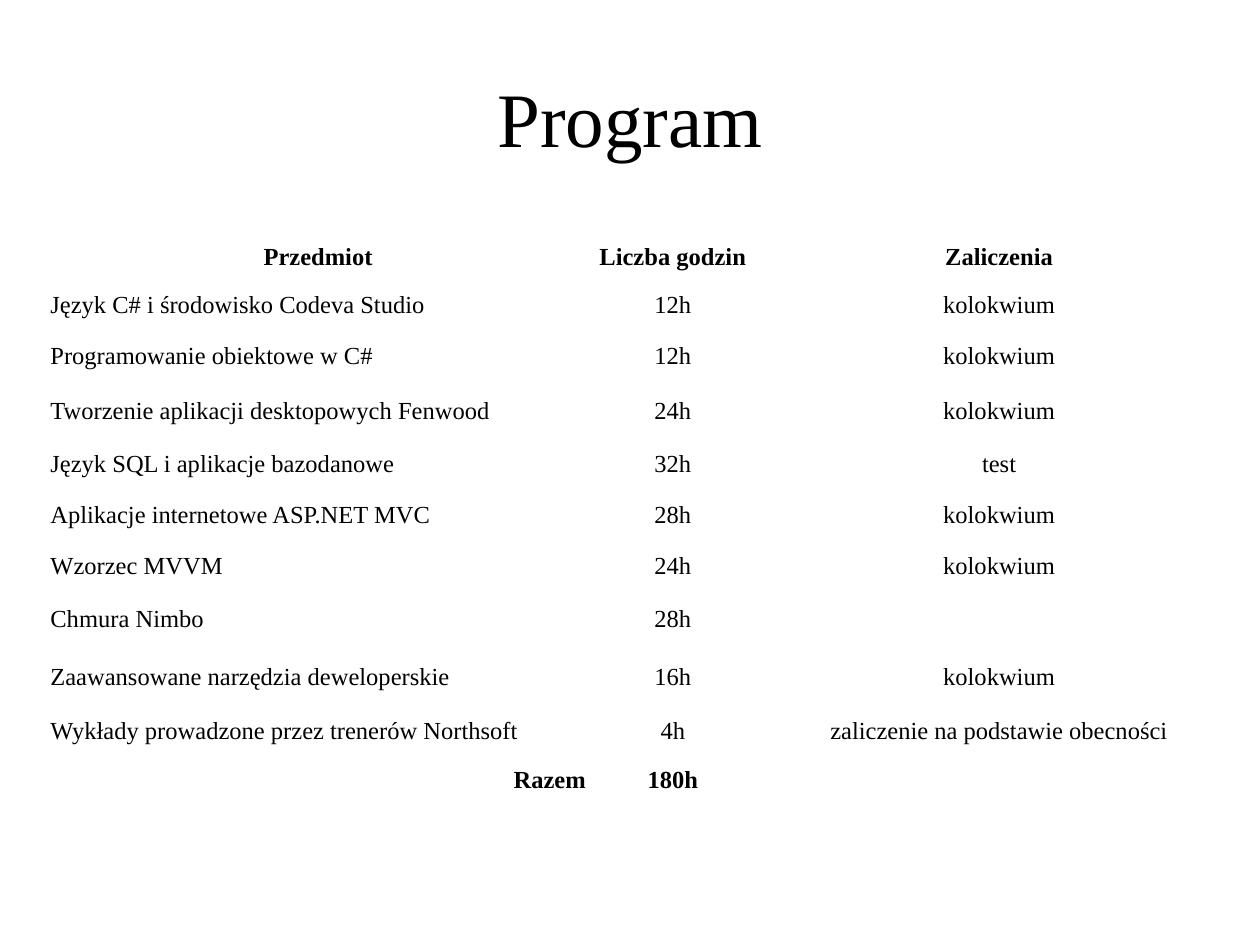
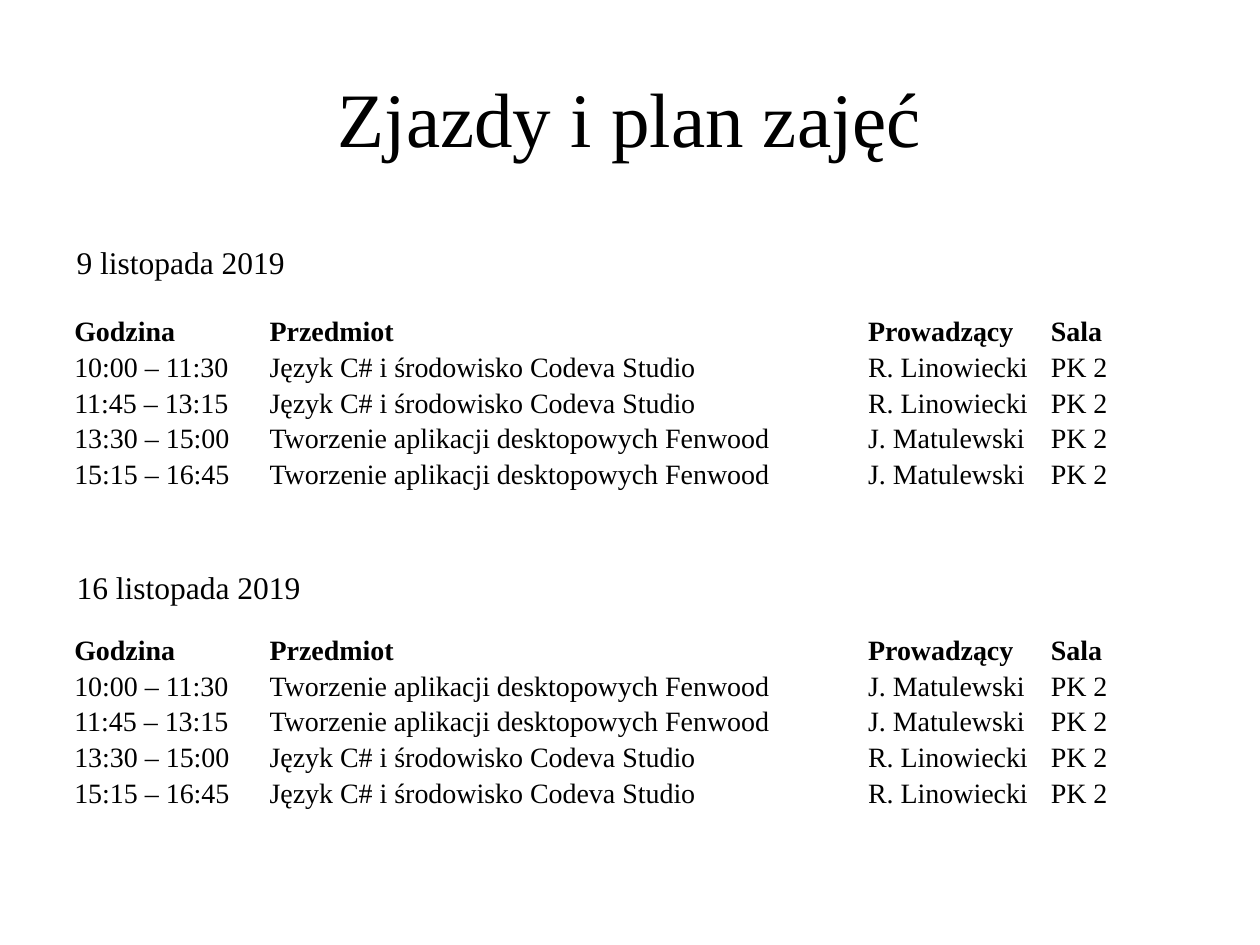
from lxml import etree
from pptx import Presentation
from pptx.dml.color import RGBColor
from pptx.enum.text import MSO_ANCHOR, PP_ALIGN
from pptx.oxml.ns import qn
from pptx.util import Inches, Pt

LEFT, CENTER, RIGHT = PP_ALIGN.LEFT, PP_ALIGN.CENTER, PP_ALIGN.RIGHT
TOP, MIDDLE = MSO_ANCHOR.TOP, MSO_ANCHOR.MIDDLE

FONT = "Times New Roman"
BLACK = "000000"
WHITE = "FFFFFF"

LANGUAGE = "Język C# i środowisko Codeva Studio"
DESKTOP = "Tworzenie aplikacji desktopowych Fenwood"

PROGRAM = [
    ("Przedmiot", "Liczba godzin", "Zaliczenia"),
    (LANGUAGE, "12h", "kolokwium"),
    ("Programowanie obiektowe w C#", "12h", "kolokwium"),
    (DESKTOP, "24h", "kolokwium"),
    ("Język SQL i aplikacje bazodanowe", "32h", "test"),
    ("Aplikacje internetowe ASP.NET MVC", "28h", "kolokwium"),
    ("Wzorzec MVVM", "24h", "kolokwium"),
    ("Chmura Nimbo", "28h", ""),
    ("Zaawansowane narzędzia deweloperskie", "16h", "kolokwium"),
    ("Wykłady prowadzone przez trenerów Northsoft", "4h",
     "zaliczenie na podstawie obecności"),
    ("Razem", "180h", ""),
]
PROGRAM_COLS = [4.35, 1.28, 3.9]
PROGRAM_ROWS = [0.37, 0.39, 0.42, 0.45, 0.39, 0.42, 0.39, 0.46, 0.46, 0.39, 0.39]

HOURS = ["10:00 – 11:30", "11:45 – 13:15", "13:30 – 15:00", "15:15 – 16:45"]
PLAN_HEADER = ("Godzina", "Przedmiot", "Prowadzący", "Sala")
PLAN_COLS = [1.55, 4.75, 1.45, 0.82]
PLAN_ROWS = [0.28] * 5
ROOM = "PK 2"
LECTURERS = {LANGUAGE: "R. Linowiecki", DESKTOP: "J. Matulewski"}
MEETINGS = [
    ("9 listopada 2019", 1.88, 1.87, 2.5, (LANGUAGE, DESKTOP)),
    ("16 listopada 2019", 4.46, 2, 5.03, (DESKTOP, LANGUAGE)),
]


def rgb(value):
    return RGBColor.from_string(value)


class Deck:
    def __init__(self):
        self.prs = Presentation()
        self.prs.slide_width = Inches(10)
        self.prs.slide_height = Inches(7.5)
        self.slide = None

    def add_slide(self, title):
        self.slide = self.prs.slides.add_slide(self.prs.slide_layouts[6])
        fill = self.slide.background.fill
        fill.solid()
        fill.fore_color.rgb = rgb(WHITE)
        self.text(title, 0.5, 0.3, 9, 1.25, 44, CENTER, MIDDLE)

    def style(self, p, size, align, bold=False):
        p.alignment = align
        p.font.name = FONT
        p.font.size = Pt(size)
        p.font.bold = bold
        p.font.color.rgb = rgb(BLACK)

    def text(self, text, x, y, w, h, size, align=LEFT, anchor=TOP, wrap=True):
        sp = self.slide.shapes.add_textbox(Inches(x), Inches(y), Inches(w), Inches(h))
        tf = sp.text_frame
        tf.word_wrap = wrap
        tf.vertical_anchor = anchor
        tf.text = text
        self.style(tf.paragraphs[0], size, align)

    def borders(self, cell, row):
        tc_pr = cell._tc.get_or_add_tcPr()
        widths = {"L": 1, "R": 1, "T": 3 if row == 1 else 1, "B": 3 if row == 0 else 1}
        for i, (side, width) in enumerate(widths.items()):
            ln = etree.Element(qn(f"a:ln{side}"), w=str(Pt(width)))
            fill = etree.SubElement(ln, qn("a:solidFill"))
            etree.SubElement(fill, qn("a:srgbClr"), val=WHITE)
            tc_pr.insert(i, ln)

    def table(self, rows, x, y, widths, heights, size, margin, anchor, align_of,
              bold_rows=(0,), spacing=None):
        frame = self.slide.shapes.add_table(
            len(rows), len(widths), Inches(x), Inches(y),
            Inches(sum(widths)), Inches(sum(heights)))
        table = frame.table
        table.first_row = table.horz_banding = False
        for column, width in zip(table.columns, widths):
            column.width = Inches(width)
        for r, (values, height) in enumerate(zip(rows, heights)):
            table.rows[r].height = Inches(height)
            for c, value in enumerate(values):
                cell = table.cell(r, c)
                cell.margin_left = cell.margin_right = Inches(margin)
                cell.margin_top = cell.margin_bottom = 0
                cell.vertical_anchor = anchor
                cell.fill.background()
                self.borders(cell, r)
                cell.text = value
                p = cell.text_frame.paragraphs[0]
                p.line_spacing = spacing
                self.style(p, size, align_of(r, c), r in bold_rows)


def program_slide(deck):
    last = len(PROGRAM) - 1

    def align_of(r, c):
        if c or r == 0:
            return CENTER
        return RIGHT if r == last else LEFT

    deck.add_slide("Program")
    deck.table(PROGRAM, 0.35, 1.86, PROGRAM_COLS, PROGRAM_ROWS, 14, 0.05, MIDDLE,
               align_of, bold_rows=(0, last))


def plan_slide(deck):
    deck.add_slide("Zjazdy i plan zajęć")
    for date, date_y, date_w, table_y, (first, second) in MEETINGS:
        subjects = [first, first, second, second]
        rows = [PLAN_HEADER] + [(hour, subject, LECTURERS[subject], ROOM)
                                for hour, subject in zip(HOURS, subjects)]
        deck.table(rows, 0.52, table_y, PLAN_COLS, PLAN_ROWS, 16, 0.07, TOP,
                   lambda r, c: LEFT, spacing=1.06)
        deck.text(date, 0.51, date_y, date_w, 0.4, 18, wrap=False)


def main():
    deck = Deck()
    program_slide(deck)
    plan_slide(deck)
    deck.prs.save("out.pptx")


if __name__ == "__main__":
    main()
